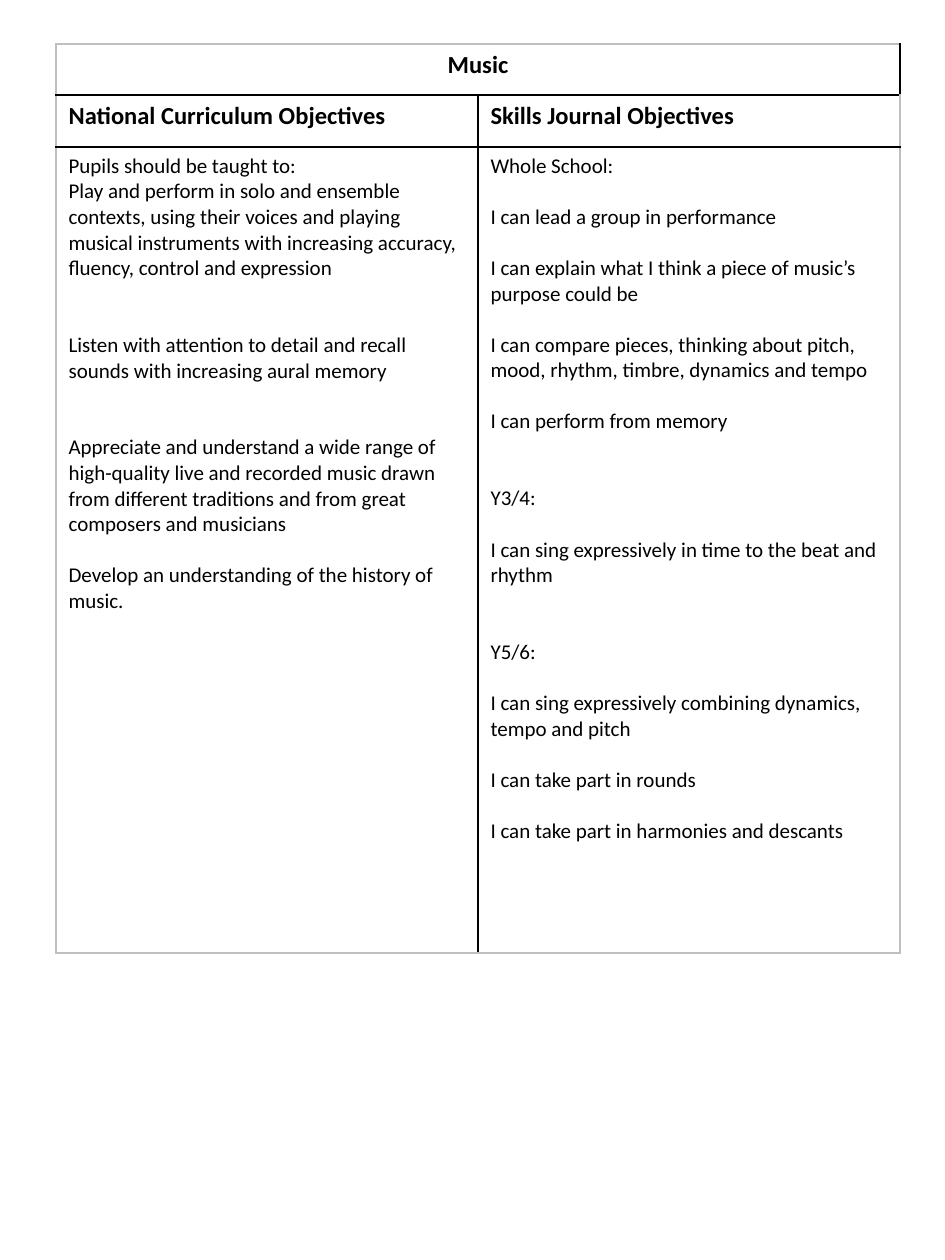
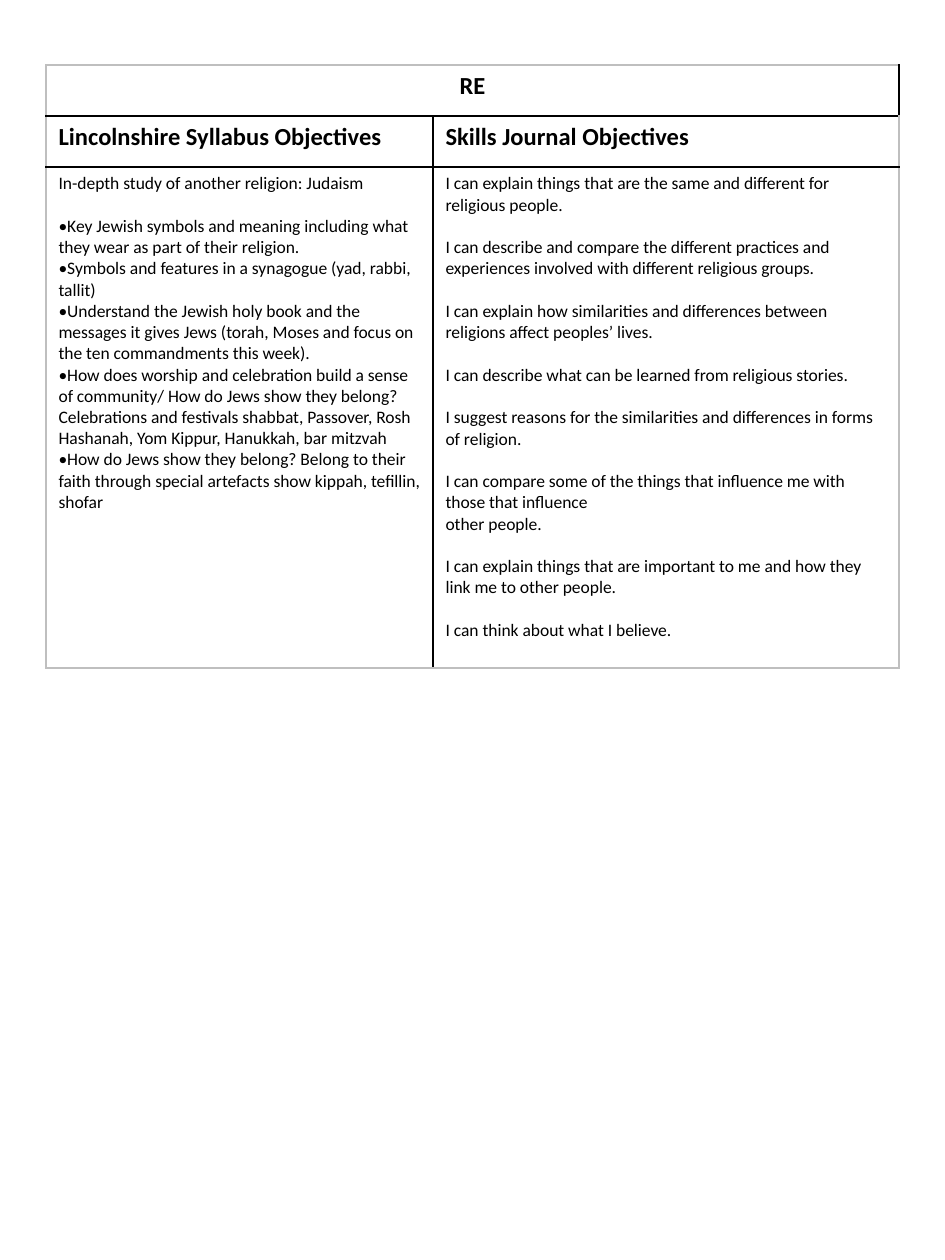
from lxml import etree
from pptx import Presentation
from pptx.dml.color import RGBColor
from pptx.enum.text import PP_ALIGN
from pptx.oxml.ns import qn
from pptx.util import Emu, Pt

CENTER, LEFT = PP_ALIGN.CENTER, PP_ALIGN.LEFT
BLACK = RGBColor(0, 0, 0)
GREY = RGBColor(0xBF, 0xBF, 0xBF)
FONT = "Calibri"
HEADING_SIZE = 14
LINE_HEIGHT = 1.22
PX = 914400 / 126


def px(length):
    return Emu(round(length * PX))


def write_paragraphs(cell, entries, size, bold, align):
    frame = cell.text_frame
    frame.text = "\n".join(text for gap_lines, text in entries)
    for para, (gap_lines, text) in zip(frame.paragraphs, entries):
        para.alignment = align
        para.space_before = Pt(round(gap_lines * size * LINE_HEIGHT, 1))
        for span in para.runs:
            span.font.name = FONT
            span.font.size = Pt(size)
            span.font.bold = bold
            span.font.color.rgb = BLACK


SUBJECTS = [
    {
        "title": "Music",
        "left": 56, "top": 44,
        "columns": [422, 422],
        "rows": [51, 52, 806],
        "size": 12,
        "headings": ["National Curriculum Objectives", "Skills Journal Objectives"],
        "objectives": [
            [
                (0, "Pupils should be taught to:"),
                (0, "Play and perform in solo and ensemble contexts, using their voices and playing "
                    "musical instruments with increasing accuracy, fluency, control and expression"),
                (2, "Listen with attention to detail and recall sounds with increasing aural memory"),
                (2, "Appreciate and understand a wide range of high-quality live and recorded music "
                    "drawn from different traditions and from great composers and musicians"),
                (1, "Develop an understanding of the history of music."),
            ],
            [
                (0, "Whole School:"),
                (1, "I can lead a group in performance"),
                (1, "I can explain what I think a piece of music’s purpose could be"),
                (1, "I can compare pieces, thinking about pitch, mood, rhythm, timbre, dynamics and tempo"),
                (1, "I can perform from memory"),
                (2, "Y3/4:"),
                (1, "I can sing expressively in time to the beat and rhythm"),
                (2, "Y5/6:"),
                (1, "I can sing expressively combining dynamics, tempo and pitch"),
                (1, "I can take part in rounds"),
                (1, "I can take part in harmonies and descants"),
            ],
        ],
    },
    {
        "title": "RE",
        "left": 46, "top": 65,
        "columns": [387, 466],
        "rows": [51, 51, 501],
        "size": 10,
        "headings": ["Lincolnshire Syllabus Objectives", "Skills Journal Objectives"],
        "objectives": [
            [
                (0, "In-depth study of another religion: Judaism"),
                (1, "•Key Jewish symbols and meaning including what they wear as part of their religion."),
                (0, "•Symbols and features in a synagogue (yad, rabbi, tallit)"),
                (0, "•Understand the Jewish holy book and the messages it gives Jews (torah, Moses and "
                    "focus on the ten commandments this week)."),
                (0, "•How does worship and celebration build a sense of community/ How do Jews show they "
                    "belong? Celebrations and festivals shabbat, Passover, Rosh Hashanah, Yom Kippur, "
                    "Hanukkah, bar mitzvah"),
                (0, "•How do Jews show they belong? Belong to their faith through special artefacts show "
                    "kippah, tefillin, shofar"),
            ],
            [
                (0, "I can explain things that are the same and different for religious people."),
                (1, "I can describe and compare the different practices and experiences involved with "
                    "different religious groups."),
                (1, "I can explain how similarities and differences between religions affect peoples’ lives."),
                (1, "I can describe what can be learned from religious stories."),
                (1, "I suggest reasons for the similarities and differences in forms of religion."),
                (1, "I can compare some of the things that influence me with those that influence"),
                (0, "other people."),
                (1, "I can explain things that are important to me and how they link me to other people."),
                (1, "I can think about what I believe."),
            ],
        ],
    },
]

deck = Presentation()
deck.slide_width, deck.slide_height = px(945), px(1260)
blank_layout = deck.slide_layouts[6]

for subject in SUBJECTS:
    page = deck.slides.add_slide(blank_layout)
    columns, rows = subject["columns"], subject["rows"]
    table = page.shapes.add_table(
        len(rows), len(columns), px(subject["left"]), px(subject["top"]), px(sum(columns)), px(sum(rows))
    ).table
    table.first_row = False
    table.horz_banding = False
    for column, width in zip(table.columns, columns):
        column.width = px(width)
    for row, height in zip(table.rows, rows):
        row.height = px(height)

    last_row, last_column = len(rows) - 1, len(columns) - 1
    for row_index in range(len(rows)):
        for column_index in range(len(columns)):
            cell = table.cell(row_index, column_index)
            properties = cell._tc.get_or_add_tcPr()
            outer_edges = {
                "a:lnL": column_index == 0,
                "a:lnR": column_index == last_column,
                "a:lnT": row_index == 0,
                "a:lnB": row_index == last_row,
            }
            for edge, is_outer in outer_edges.items():
                line = etree.SubElement(properties, qn(edge), w=str(Pt(1)))
                fill = etree.SubElement(line, qn("a:solidFill"))
                etree.SubElement(fill, qn("a:srgbClr"), val=str(GREY if is_outer else BLACK))
            cell.fill.background()

    table.cell(0, 0).merge(table.cell(0, last_column))
    write_paragraphs(table.cell(0, 0), [(0, subject["title"])], HEADING_SIZE, True, CENTER)
    for column_index, heading in enumerate(subject["headings"]):
        write_paragraphs(table.cell(1, column_index), [(0, heading)], HEADING_SIZE, True, LEFT)
        write_paragraphs(
            table.cell(2, column_index), subject["objectives"][column_index], subject["size"], False, LEFT
        )

deck.save("out.pptx")
